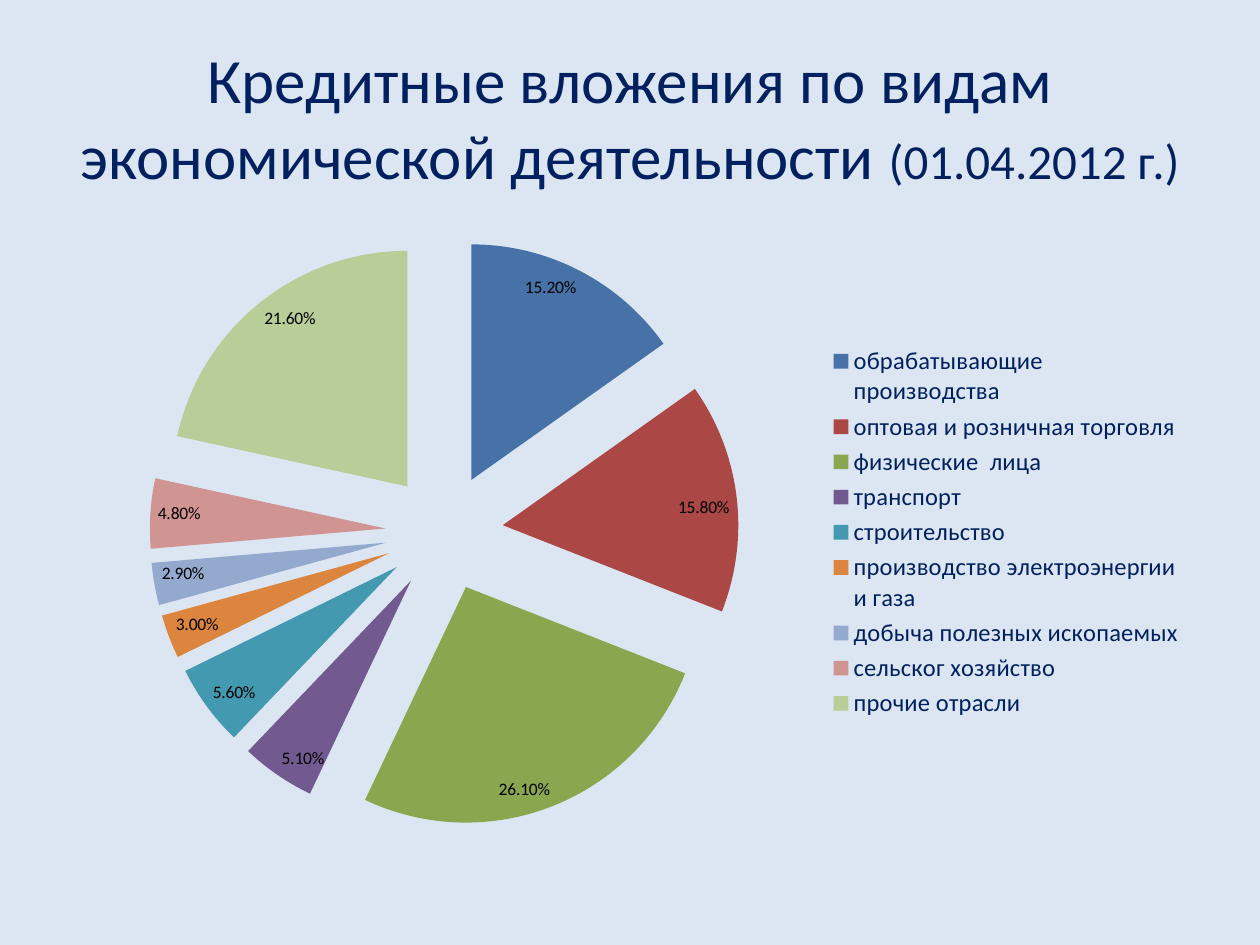
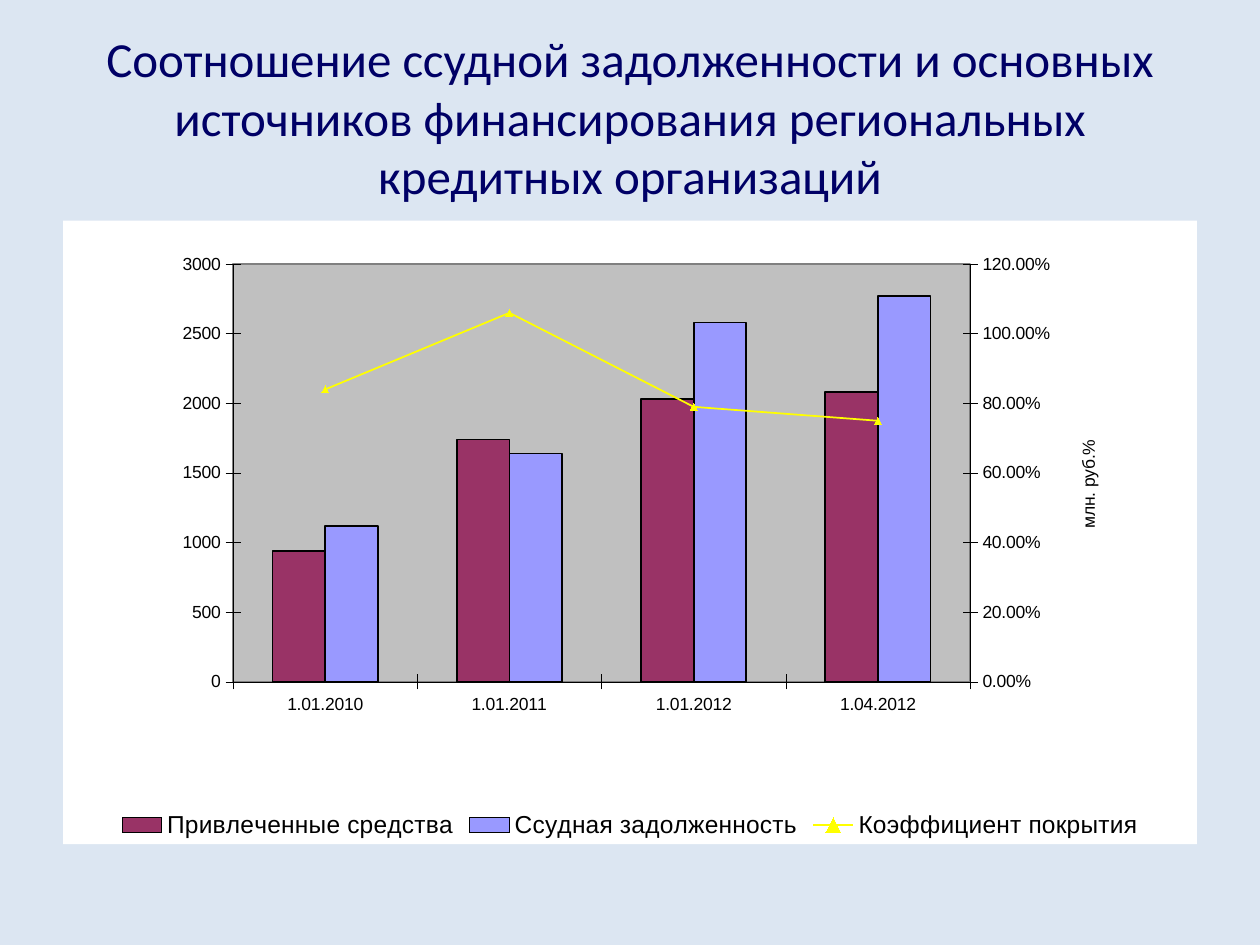
from copy import deepcopy
from pptx import Presentation
from pptx.chart.axis import CategoryAxis, ValueAxis
from pptx.chart.data import CategoryChartData
from pptx.dml.color import RGBColor
from pptx.enum.chart import (XL_CHART_TYPE, XL_LABEL_POSITION, XL_LEGEND_POSITION,
                             XL_MARKER_STYLE, XL_TICK_MARK)
from pptx.enum.text import MSO_ANCHOR, PP_ALIGN
from pptx.oxml import parse_xml
from pptx.oxml.ns import nsdecls, qn
from pptx.util import Inches, Pt

COLORS = {
    "back": "DCE6F2", "navy": "002060", "indigo": "000066", "black": "000000",
    "white": "FFFFFF", "plot": "C0C0C0", "edge": "808080",
    "funds": "993366", "loans": "9999FF", "ratio": "FFFF00",
}
SECTORS = [
    ("обрабатывающие производства", 0.152, "4672A8"),
    ("оптовая и розничная торговля", 0.158, "AB4744"),
    ("физические  лица", 0.261, "8AA64F"),
    ("транспорт", 0.051, "725990"),
    ("строительство", 0.056, "4299B0"),
    ("производство электроэнергии и газа", 0.03, "DC853E"),
    ("добыча полезных ископаемых", 0.029, "93A9CE"),
    ("сельског хозяйство", 0.048, "D09493"),
    ("прочие отрасли", 0.216, "B8CD97"),
]
DATES = ["1.01.2010", "1.01.2011", "1.01.2012", "1.04.2012"]
SERIES = [
    ("Привлеченные средства", [940, 1740, 2030, 2080]),
    ("Ссудная задолженность", [1120, 1640, 2580, 2770]),
    ("Коэффициент покрытия", [0.84, 1.06, 0.79, 0.75]),
]


def rgb(value):
    return RGBColor.from_string(value)


def paint(fill, value):
    fill.solid()
    fill.fore_color.rgb = rgb(value)


def stroke(line, name, width):
    line.color.rgb = rgb(COLORS[name])
    line.width = Pt(width)


def style(font, size, name, face):
    font.size = Pt(size)
    font.name = face
    font.bold = False
    font.color.rgb = rgb(COLORS[name])


def add_slide(deck, color, runs):
    slide = deck.slides.add_slide(deck.slide_layouts[5])
    title = slide.shapes.title
    title.left, title.top = Inches(0.5), Inches(0.3)
    title.width, title.height = Inches(9), Inches(1.25)
    frame = title.text_frame
    frame.word_wrap = True
    frame.vertical_anchor = MSO_ANCHOR.MIDDLE
    para = frame.paragraphs[0]
    para.alignment = PP_ALIGN.CENTER
    for text, size in runs:
        run = para.add_run()
        run.text = text
        style(run.font, size, color, "Calibri")
    return slide


def add_chart(slide, kind, cats, series, face, place, color):
    data = CategoryChartData()
    data.categories = cats
    for name, values in series:
        data.add_series(name, values)
    chart = slide.shapes.add_chart(
        kind, Inches(0.5), Inches(1.75), Inches(9), Inches(4.95), data).chart
    chart.has_title = False
    style(chart.font, 10, "black", face)
    chart.has_legend = True
    chart.legend.position = place
    chart.legend.include_in_layout = False
    style(chart.legend.font, 14, color, face)
    return chart


def add_pie(slide):
    chart = add_chart(slide, XL_CHART_TYPE.PIE, [row[0] for row in SECTORS],
                      [("Series 1", [row[1] for row in SECTORS])],
                      "Calibri", XL_LEGEND_POSITION.RIGHT, "navy")
    plot = chart.plots[0]
    plot.vary_by_categories = True
    pie = plot.series[0]
    burst = parse_xml(f'<c:explosion {nsdecls("c")} val="25"/>')
    pie._element.find(qn("c:tx")).addnext(burst)
    for i, (_, _, color) in enumerate(SECTORS):
        paint(pie.points[i].format.fill, color)
    plot.has_data_labels = True
    labels = plot.data_labels
    labels.show_value = True
    labels.show_percentage = False
    labels.number_format = "0.00%"
    labels.number_format_is_linked = False
    labels.position = XL_LABEL_POSITION.INSIDE_END
    style(labels.font, 10, "black", "Calibri")


def tune(axis):
    axis.major_tick_mark = XL_TICK_MARK.CROSS
    axis.minor_tick_mark = XL_TICK_MARK.NONE
    axis.has_major_gridlines = False
    style(axis.tick_labels.font, 10, "black", "Arial")
    stroke(axis.format.line, "black", 0.25)


def scale(axis, text, top, step, form):
    axis.minimum_scale, axis.maximum_scale, axis.major_unit = 0, top, step
    axis.tick_labels.number_format = form
    axis.tick_labels.number_format_is_linked = False
    frame = axis.axis_title.text_frame
    run = frame.paragraphs[0].add_run()
    run.text = text
    style(run.font, 10, "black", "Arial")
    frame._txBody.find(qn("a:bodyPr")).set("rot", "-5400000")


def split_line(chart):
    bars = chart.plots[0]._element
    line = parse_xml(
        f'<c:lineChart {nsdecls("c")}><c:grouping val="standard"/>'
        '<c:varyColors val="0"/><c:marker val="1"/>'
        '<c:axId val="5001"/><c:axId val="5002"/></c:lineChart>')
    bars.addnext(line)
    ser = bars.findall(qn("c:ser"))[-1]
    flag = ser.find(qn("c:invertIfNegative"))
    if flag is not None:
        ser.remove(flag)
    line.insert(2, ser)


def add_right(chart):
    left = chart.value_axis._element
    cat, val = deepcopy(chart.category_axis._element), deepcopy(left)
    for axis, own, other in ((cat, "5001", "5002"), (val, "5002", "5001")):
        axis.find(qn("c:axId")).set("val", own)
        axis.find(qn("c:crossAx")).set("val", other)
    left.addnext(val)
    val.addnext(cat)
    val.find(qn("c:axPos")).set("val", "r")
    val.find(qn("c:crosses")).set("val", "max")
    CategoryAxis(cat).visible = False
    return ValueAxis(val)


def box(color, edge=None):
    line = f'<a:solidFill><a:srgbClr val="{edge}"/></a:solidFill>' if edge else "<a:noFill/>"
    return parse_xml(
        f'<c:spPr {nsdecls("c", "a")}><a:solidFill><a:srgbClr val="{color}"/>'
        f'</a:solidFill><a:ln w="12700">{line}</a:ln></c:spPr>')


def set_area(chart, left, top, width, height):
    root = chart._chartSpace.find(qn("c:chart"))
    root.addnext(box(COLORS["white"]))
    area = root.find(qn("c:plotArea"))
    area.append(box(COLORS["plot"], COLORS["edge"]))
    old = area.find(qn("c:layout"))
    if old is not None:
        area.remove(old)
    sizes = "".join(f'<c:{key} val="{value}"/>' for key, value in
                    zip("xywh", (left, top, width, height)))
    area.insert(0, parse_xml(
        f'<c:layout {nsdecls("c")}><c:manualLayout><c:layoutTarget val="inner"/>'
        f'<c:xMode val="edge"/><c:yMode val="edge"/>{sizes}'
        '</c:manualLayout></c:layout>'))


def add_combo(slide):
    chart = add_chart(slide, XL_CHART_TYPE.COLUMN_CLUSTERED, DATES, SERIES,
                      "Arial", XL_LEGEND_POSITION.BOTTOM, "black")
    tune(chart.category_axis)
    tune(chart.value_axis)
    split_line(chart)
    right = add_right(chart)
    scale(chart.value_axis, "млн. руб.", 3000, 500, "0")
    scale(right, "%", 1.2, 0.2, "0.00%")
    bars, lines = chart.plots
    bars.gap_width, bars.overlap = 150, 0
    bars.vary_by_categories = False
    for ser, name in zip(bars.series, ("funds", "loans")):
        paint(ser.format.fill, COLORS[name])
        stroke(ser.format.line, "black", 1)
    ratio = lines.series[0]
    ratio.smooth = False
    stroke(ratio.format.line, "ratio", 1)
    ratio.marker.style = XL_MARKER_STYLE.TRIANGLE
    ratio.marker.size = 4
    paint(ratio.marker.format.fill, COLORS["ratio"])
    stroke(ratio.marker.format.line, "ratio", 1)
    set_area(chart, 0.15, 0.07, 0.65, 0.67)


def main():
    deck = Presentation()
    deck.slide_width, deck.slide_height = Inches(10), Inches(7.5)
    paint(deck.slide_master.background.fill, COLORS["back"])
    add_pie(add_slide(deck, "navy", [
        ("Кредитные вложения по видам экономической деятельности ", 36),
        ("(01.04.2012 г.)", 28)]))
    add_combo(add_slide(deck, "indigo", [
        ("Соотношение ссудной задолженности и основных источников "
         "финансирования региональных кредитных организаций", 28)]))
    deck.save("out.pptx")


if __name__ == "__main__":
    main()
